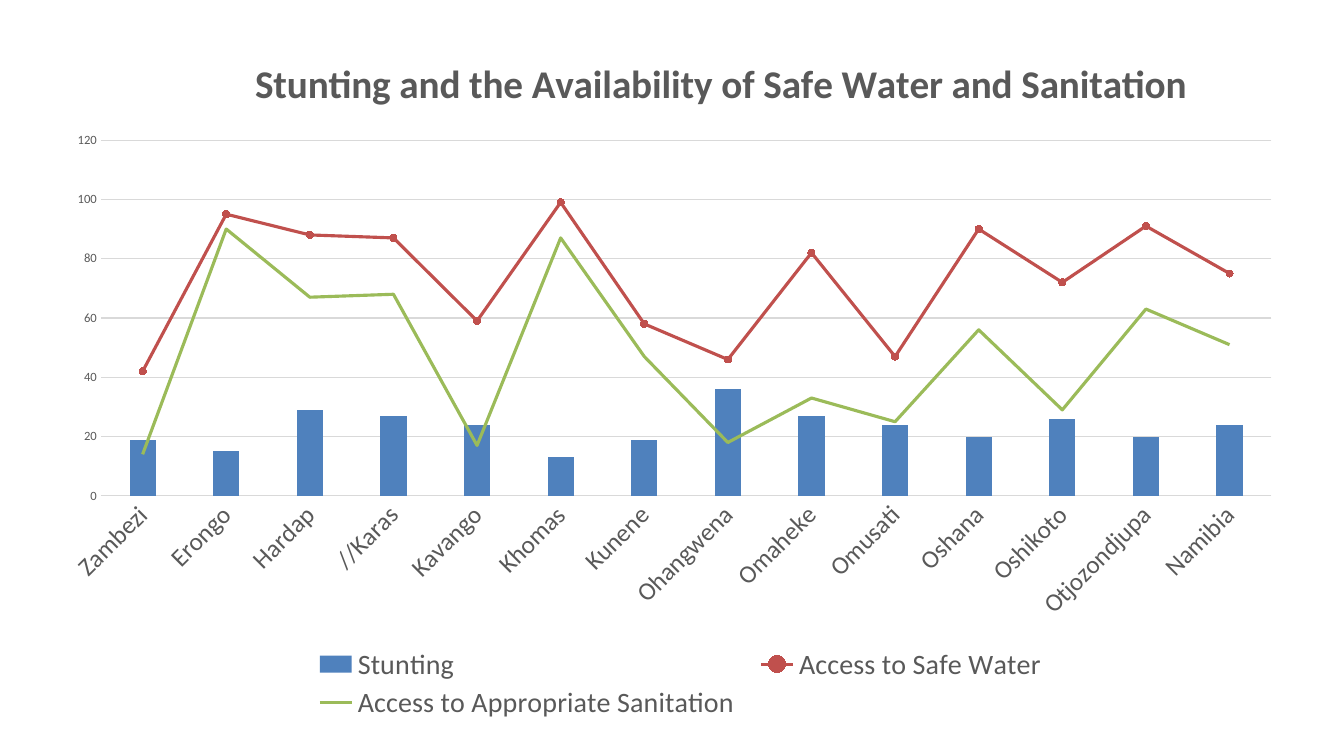
from typing import NamedTuple

from lxml import etree
from pptx import Presentation, util as u
from pptx.chart.data import CategoryChartData
from pptx.dml.color import RGBColor
from pptx.enum import chart as ch
from pptx.oxml import parse_xml
from pptx.oxml.ns import nsdecls, qn

COLUMNS, ROWS = 133.3, 75
CELL = u.Inches(0.1)
FONT = "Calibri"
GREY = RGBColor(0x59, 0x59, 0x59)
PALE = RGBColor(0xD9, 0xD9, 0xD9)
BLACK = RGBColor(0x00, 0x00, 0x00)
BLUE = RGBColor(0x4F, 0x81, 0xBD)
RED = RGBColor(0xC0, 0x50, 0x4D)
GREEN = RGBColor(0x9B, 0xBB, 0x59)


class Area(NamedTuple):
    """A rectangle in columns and rows of the slide grid."""
    left: float
    top: float
    width: float
    height: float


class Indicator(NamedTuple):
    name: str
    percents: list[int]
    color: RGBColor
    is_line: bool = True
    has_marker: bool = False


FRAME = Area(4.6, 2.9, 123.9, 69.3)
PLOT = Area(10, 13.9, 116.1, 35.3)
TITLE = Area(24.6, 5, 93.4, 5)
LEGEND = Area(30, 63.8, 75, 8)

REGIONS = ["Zambezi", "Erongo", "Hardap", "//Karas", "Kavango", "Khomas", "Kunene",
           "Ohangwena", "Omaheke", "Omusati", "Oshana", "Oshikoto", "Otjozondjupa",
           "Namibia"]
INDICATORS = [
    Indicator("Stunting",
              [19, 15, 29, 27, 24, 13, 19, 36, 27, 24, 20, 26, 20, 24], BLUE, is_line=False),
    Indicator("Access to Safe Water",
              [42, 95, 88, 87, 59, 99, 58, 46, 82, 47, 90, 72, 91, 75], RED, has_marker=True),
    Indicator("Access to Appropriate Sanitation",
              [14, 90, 67, 68, 17, 87, 47, 18, 33, 25, 56, 29, 63, 51], GREEN),
]


def style_font(font, size: float, color: RGBColor = GREY, bold: bool = False) -> None:
    font.name, font.size, font.bold = FONT, u.Pt(size), bold
    font.color.rgb = color


def style_line(line, color: RGBColor, width: float) -> None:
    line.color.rgb, line.width = color, u.Pt(width)


def place(part, area: Area, index: int, sized: bool = True, inner: bool = False) -> None:
    """Fix a chart part at an area, with its layout as the child at index."""
    for old in part.findall(qn("c:layout")):
        part.remove(old)
    layout = parse_xml(f"<c:layout {nsdecls('c')}><c:manualLayout/></c:layout>")
    settings = {"layoutTarget": "inner"} if inner else {}
    settings |= {"xMode": "edge", "yMode": "edge",
                 "x": (area.left - FRAME.left) / FRAME.width,
                 "y": (area.top - FRAME.top) / FRAME.height}
    if sized:
        settings |= {"w": area.width / FRAME.width, "h": area.height / FRAME.height}
    for tag, value in settings.items():
        etree.SubElement(layout[0], qn(f"c:{tag}")).set("val", str(value))
    part.insert(index, layout)


def move_to_lines(chart) -> None:
    """Move the line indicators from the columns into a line plot on the same axes."""
    columns = chart._chartSpace.chart.plotArea.find(qn("c:barChart"))
    lines = parse_xml(f'<c:lineChart {nsdecls("c")}><c:grouping val="standard"/>'
                      '<c:varyColors val="0"/><c:marker val="1"/></c:lineChart>')
    marker = lines.find(qn("c:marker"))
    for series, indicator in zip(columns.findall(qn("c:ser")), INDICATORS):
        if indicator.is_line:
            for bar_only in series.findall(qn("c:invertIfNegative")):
                series.remove(bar_only)
            marker.addprevious(series)
    for axis in columns.findall(qn("c:axId")):
        etree.SubElement(lines, qn("c:axId")).set("val", axis.get("val"))
    columns.addnext(lines)


def style_series(chart) -> None:
    drawn = [series for plot in chart.plots for series in plot.series]
    for series, indicator in zip(drawn, INDICATORS):
        if not indicator.is_line:
            series.format.fill.solid()
            series.format.fill.fore_color.rgb = indicator.color
            continue
        series.smooth = False
        style_line(series.format.line, indicator.color, 2.25)
        if indicator.has_marker:
            series.marker.style = ch.XL_MARKER_STYLE.CIRCLE
            series.marker.size = 5
            series.marker.format.fill.solid()
            series.marker.format.fill.fore_color.rgb = indicator.color
            style_line(series.marker.format.line, indicator.color, 0.75)
        else:
            series.marker.style = ch.XL_MARKER_STYLE.NONE


def style_axes(chart) -> None:
    regions, percents = chart.category_axis, chart.value_axis
    for axis, size in ((regions, 18), (percents, 9)):
        axis.major_tick_mark = axis.minor_tick_mark = ch.XL_TICK_MARK.NONE
        style_font(axis.tick_labels.font, size)
    style_line(regions.format.line, PALE, 0.75)
    regions._element.find(qn("c:txPr")).find(qn("a:bodyPr")).set("rot", str(-45 * 60000))
    percents.format.line.fill.background()
    percents.minimum_scale, percents.maximum_scale, percents.major_unit = 0, 120, 20
    style_line(percents.major_gridlines.format.line, PALE, 0.75)


def add_title(chart) -> None:
    heading = chart.chart_title.text_frame
    heading.text = "Stunting and the Availability of Safe Water and Sanitation"
    style_font(heading.paragraphs[0].font, 28, bold=True)
    place(chart.chart_title._element, TITLE, 1, sized=False)


def add_legend(chart) -> None:
    chart.has_legend = True
    chart.legend.position = ch.XL_LEGEND_POSITION.BOTTOM
    chart.legend.include_in_layout = False
    style_font(chart.legend.font, 20)
    place(chart.legend._element, LEGEND, 1)


def add_sanitation_chart(slide) -> None:
    data = CategoryChartData()
    data.categories = REGIONS
    for indicator in INDICATORS:
        data.add_series(indicator.name, indicator.percents)
    frame = [round(length * CELL) for length in FRAME]
    chart = slide.shapes.add_chart(ch.XL_CHART_TYPE.COLUMN_CLUSTERED, *frame, data).chart
    style_font(chart.font, 10, BLACK)
    chart.plots[0].gap_width = 219
    chart.plots[0].vary_by_categories = False
    move_to_lines(chart)
    style_series(chart)
    style_axes(chart)
    add_title(chart)
    add_legend(chart)
    place(chart._chartSpace.chart.plotArea, PLOT, 0, inner=True)


def main() -> None:
    deck = Presentation()
    deck.slide_width, deck.slide_height = round(COLUMNS * CELL), ROWS * CELL
    add_sanitation_chart(deck.slides.add_slide(deck.slide_layouts[6]))
    deck.save("out.pptx")


if __name__ == "__main__":
    main()
